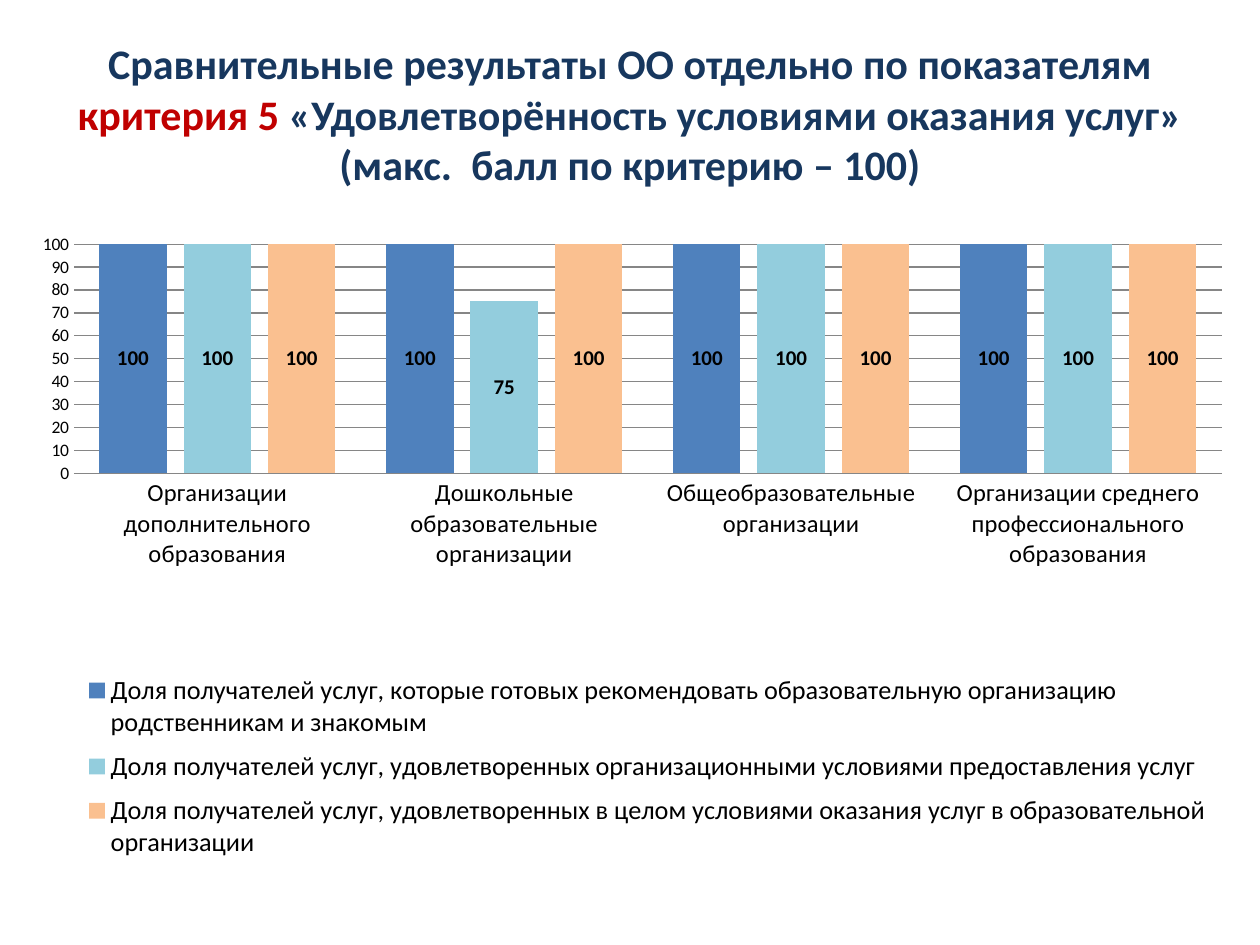
from lxml import etree
from pptx import Presentation
from pptx import util as u
from pptx.chart.data import CategoryChartData
from pptx.dml.color import RGBColor
from pptx.enum import chart as ch
from pptx.enum import text
from pptx.oxml import ns

NAVY = RGBColor(0x17, 0x37, 0x5E)
RED = RGBColor(0xC0, 0x00, 0x00)
BLACK = RGBColor(0, 0, 0)
GREY = RGBColor(0x86, 0x86, 0x86)
BLUE = RGBColor(0x4F, 0x81, 0xBD)
AQUA = RGBColor(0x93, 0xCD, 0xDD)
PEACH = RGBColor(0xFA, 0xC0, 0x90)
FONT = "Calibri"

TITLE_LINES = [
    [("Сравнительные результаты ОО отдельно по показателям", NAVY)],
    [("критерия 5 ", RED), ("«Удовлетворённость условиями оказания услуг»", NAVY)],
    [("(макс.  балл по критерию – 100)", NAVY)],
]
ORGANIZATIONS = [
    "Организации дополнительного образования",
    "Дошкольные образовательные организации",
    "Общеобразовательные организации",
    "Организации среднего профессионального образования",
]
INDICATORS = [
    ("Доля получателей услуг, которые готовых рекомендовать образовательную "
     "организацию родственникам и знакомым", [100, 100, 100, 100], BLUE),
    ("Доля получателей услуг, удовлетворенных организационными условиями "
     "предоставления услуг", [100, 75, 100, 100], AQUA),
    ("Доля получателей услуг, удовлетворенных в целом условиями оказания услуг "
     "в образовательной организации", [100, 100, 100, 100], PEACH),
]


def px(n):
    return u.Emu(round(n * 914400 / 126))


def style_font(font, size, color=BLACK, bold=False):
    font.name = FONT
    font.size = u.Pt(size)
    font.bold = bold
    font.color.rgb = color


def set_layout(parent, before, x, y, w, h, inner=False):
    """Fix the place of a chart part, in fractions of the chart box."""
    for old in parent.findall(ns.qn("c:layout")):
        parent.remove(old)
    layout = etree.Element(ns.qn("c:layout"))
    manual = etree.SubElement(layout, ns.qn("c:manualLayout"))
    values = [("xMode", "edge"), ("yMode", "edge"),
              ("x", x), ("y", y), ("w", w), ("h", h)]
    if inner:
        values.insert(0, ("layoutTarget", "inner"))
    for tag, value in values:
        etree.SubElement(manual, ns.qn("c:" + tag)).set("val", str(value))
    parent.find(ns.qn(before)).addprevious(layout)


def add_title(slide, left, top, width, height):
    frame = slide.shapes.add_textbox(px(left), px(top), px(width), px(height)).text_frame
    frame.word_wrap = True
    frame.vertical_anchor = text.MSO_ANCHOR.MIDDLE
    for i, line in enumerate(TITLE_LINES):
        paragraph = frame.paragraphs[0] if i == 0 else frame.add_paragraph()
        paragraph.alignment = text.PP_ALIGN.CENTER
        for words, color in line:
            run = paragraph.add_run()
            run.text = words
            style_font(run.font, 24, color, True)


def add_indicator_chart(slide, left, top, width, height):
    data = CategoryChartData()
    data.categories = ORGANIZATIONS
    for name, scores, _ in INDICATORS:
        data.add_series(name, scores)
    chart = slide.shapes.add_chart(
        ch.XL_CHART_TYPE.COLUMN_CLUSTERED,
        px(left), px(top), px(width), px(height), data).chart
    style_font(chart.font, 10)
    chart.has_title = False

    # Columns and their labels
    plot = chart.plots[0]
    plot.gap_width = 75
    plot.overlap = -25
    plot.vary_by_categories = False
    for series, (_, _, color) in zip(plot.series, INDICATORS):
        series.format.fill.solid()
        series.format.fill.fore_color.rgb = color
        labels = series.data_labels
        labels.show_value = True
        labels.position = ch.XL_LABEL_POSITION.CENTER
        style_font(labels.font, 12, bold=True)

    # Axes
    organizations = chart.category_axis
    organizations.major_tick_mark = ch.XL_TICK_MARK.NONE
    organizations.format.line.color.rgb = GREY
    style_font(organizations.tick_labels.font, 14)
    scores = chart.value_axis
    scores.minimum_scale, scores.maximum_scale, scores.major_unit = 0, 100, 10
    scores.major_tick_mark = ch.XL_TICK_MARK.NONE
    scores.format.line.fill.background()
    scores.major_gridlines.format.line.color.rgb = GREY
    style_font(scores.tick_labels.font, 10)

    # Legend and placement
    chart.has_legend = True
    legend = chart.legend
    legend.position = ch.XL_LEGEND_POSITION.BOTTOM
    legend.include_in_layout = False
    style_font(legend.font, 15)
    plot_area = chart.element.find(".//" + ns.qn("c:plotArea"))
    set_layout(plot_area, "c:barChart", 0.04, 0.03, 0.94, 0.34, inner=True)
    legend_area = chart.element.find(".//" + ns.qn("c:legend"))
    set_layout(legend_area, "c:overlay", 0.04, 0.65, 0.94, 0.31)


def main():
    deck = Presentation()
    deck.slide_width, deck.slide_height = px(1260), px(945)
    slide = deck.slides.add_slide(deck.slide_layouts[6])
    add_title(slide, 0, 16, 1260, 195)
    add_indicator_chart(slide, 25, 224, 1221, 674)
    deck.save("out.pptx")


if __name__ == "__main__":
    main()
